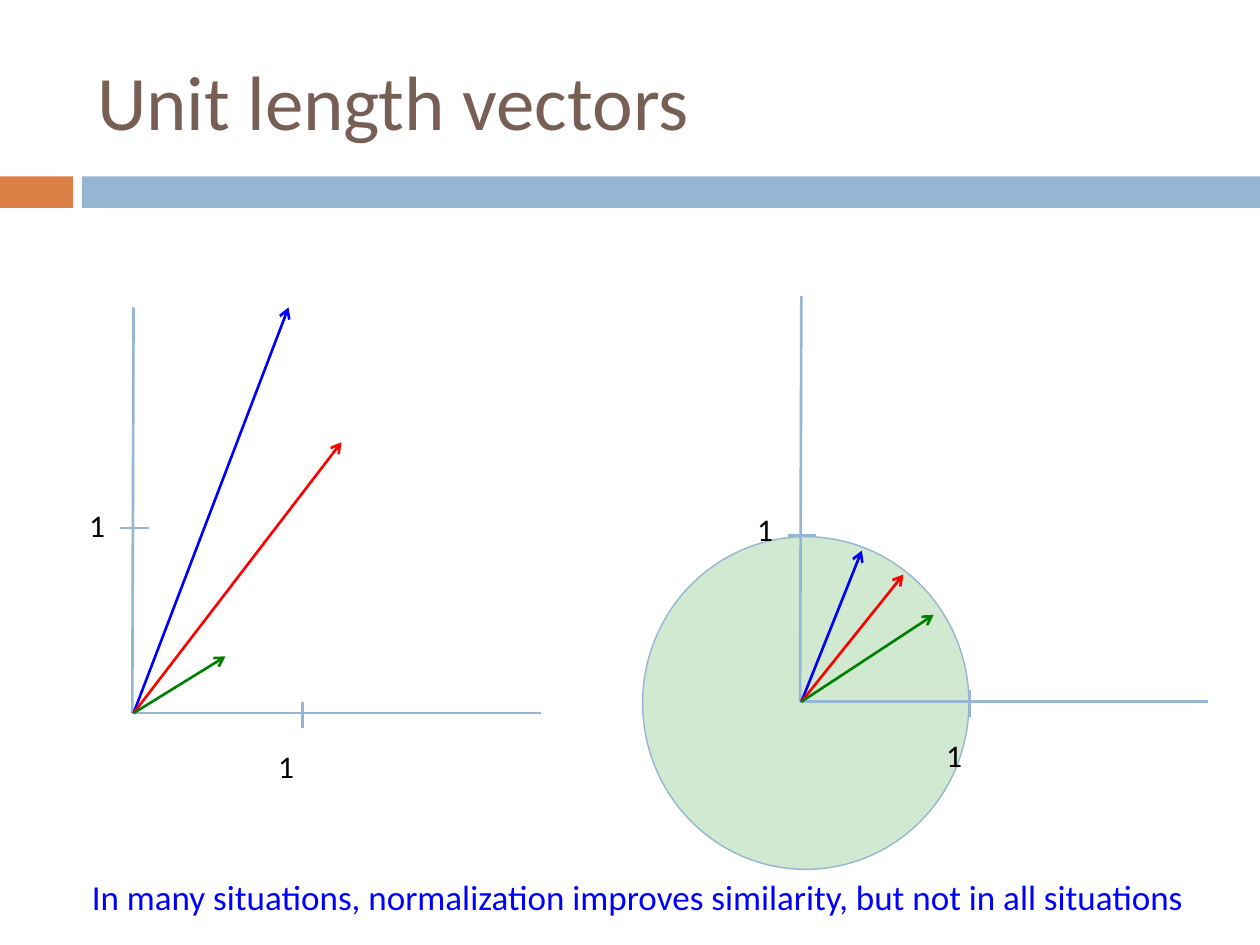
from dataclasses import dataclass

from lxml.etree import SubElement
from pptx import Presentation
from pptx.dml.color import RGBColor
from pptx.enum.shapes import MSO_CONNECTOR as Connector, MSO_SHAPE as Shape
from pptx.enum.text import MSO_ANCHOR as Anchor, PP_ALIGN as Align
from pptx.oxml.ns import qn
from pptx.util import Inches, Pt

COLORS = {
    "orange": "DD8047",
    "steel": "94B6D2",
    "brown": "775F55",
    "blue": "0000FF",
    "red": "FF0000",
    "green": "008000",
    "black": "000000",
}
FONT = "Calibri"
AXIS_LENGTH = 3.22
X_UNIT = 1.35


@dataclass
class Vector:
    color: str
    tip: tuple[float, float]


@dataclass
class Plot:
    origin: tuple[float, float]
    y_unit: float
    y_label_top: float
    vectors: list[Vector]


PLOTS = [
    Plot((1.05, 5.66), 1.47, 3.97, [
        Vector("blue", (2.29, 2.44)),
        Vector("red", (2.71, 3.51)),
        Vector("green", (1.79, 5.21)),
    ]),
    Plot((6.35, 5.57), 1.32, 4.0, [
        Vector("blue", (6.84, 4.37)),
        Vector("red", (7.17, 4.56)),
        Vector("green", (7.41, 4.88)),
    ]),
]


def rgb(name: str) -> RGBColor:
    return RGBColor.from_string(COLORS[name])


def style_text(frame, text: str, size: float, color: str) -> None:
    frame.text = text
    paragraph = frame.paragraphs[0]
    paragraph.alignment = Align.LEFT
    paragraph.font.name = FONT
    paragraph.font.size = Pt(size)
    paragraph.font.color.rgb = rgb(color)


def add_text(slide, text: str, box: tuple, size: float, color: str) -> None:
    frame = slide.shapes.add_textbox(*map(Inches, box)).text_frame
    frame.word_wrap = True
    style_text(frame, text, size, color)


def add_filled(slide, kind: Shape, box: tuple, color: str):
    shape = slide.shapes.add_shape(kind, *map(Inches, box))
    shape.shadow.inherit = False
    shape.fill.solid()
    shape.fill.fore_color.rgb = rgb(color)
    shape.line.fill.background()
    return shape


def add_line(slide, start: tuple, end: tuple, color: str = "steel", arrow: bool = False) -> None:
    line = slide.shapes.add_connector(Connector.STRAIGHT, *map(Inches, (*start, *end)))
    line.line.color.rgb = rgb(color)
    line.line.width = Pt(1.5)
    if arrow:
        SubElement(line.line._get_or_add_ln(), qn("a:tailEnd"), type="arrow")
    SubElement(line._element.spPr, qn("a:effectLst"))


def add_plot(slide, plot: Plot) -> None:
    x, y = plot.origin
    # Axes with a tick at one unit
    add_line(slide, (x, y), (x + 0.01, y - AXIS_LENGTH))
    add_line(slide, (x, y), (x + 3.24, y))
    add_line(slide, (x + 0.13, y - plot.y_unit), (x - 0.1, y - plot.y_unit))
    add_line(slide, (x + X_UNIT, y - 0.09), (x + X_UNIT, y + 0.12))
    add_text(slide, "1", (x - 0.44, plot.y_label_top, 0.35, 0.4), 18, "black")
    add_text(slide, "1", (x + 1.06, y + 0.22, 0.35, 0.4), 18, "black")
    # Vectors from the origin
    for vector in plot.vectors:
        add_line(slide, (x + 0.01, y), vector.tip, vector.color, arrow=True)


def main() -> None:
    prs = Presentation()
    prs.slide_width, prs.slide_height = Inches(10), Inches(7.5)
    slide = prs.slides.add_slide(prs.slide_layouts[5])

    # Title
    title = slide.shapes.title
    title.left, title.top, title.width, title.height = map(Inches, (0.67, 0.25, 8.92, 1.08))
    title.text_frame.vertical_anchor = Anchor.MIDDLE
    style_text(title.text_frame, "Unit length vectors", 44, "brown")

    # Band under the title
    add_filled(slide, Shape.RECTANGLE, (0, 1.4, 0.58, 0.25), "orange")
    add_filled(slide, Shape.RECTANGLE, (0.65, 1.4, 9.35, 0.25), "steel")

    # Unit circle, translucent
    circle = add_filled(slide, Shape.OVAL, (5.1, 4.26, 2.59, 2.64), "green")
    circle.line.color.rgb = rgb("steel")
    circle.line.width = Pt(0.79)
    fill_color = circle._element.spPr.find(qn("a:solidFill")).find(qn("a:srgbClr"))
    SubElement(fill_color, qn("a:alpha"), val="18000")

    # Raw vectors on the left, normalized ones on the right
    for plot in PLOTS:
        add_plot(slide, plot)

    # Conclusion
    add_text(
        slide,
        "In many situations, normalization improves similarity, but not in all situations",
        (0.63, 6.9, 9.12, 0.44), 20, "blue",
    )

    prs.save("out.pptx")


if __name__ == "__main__":
    main()
